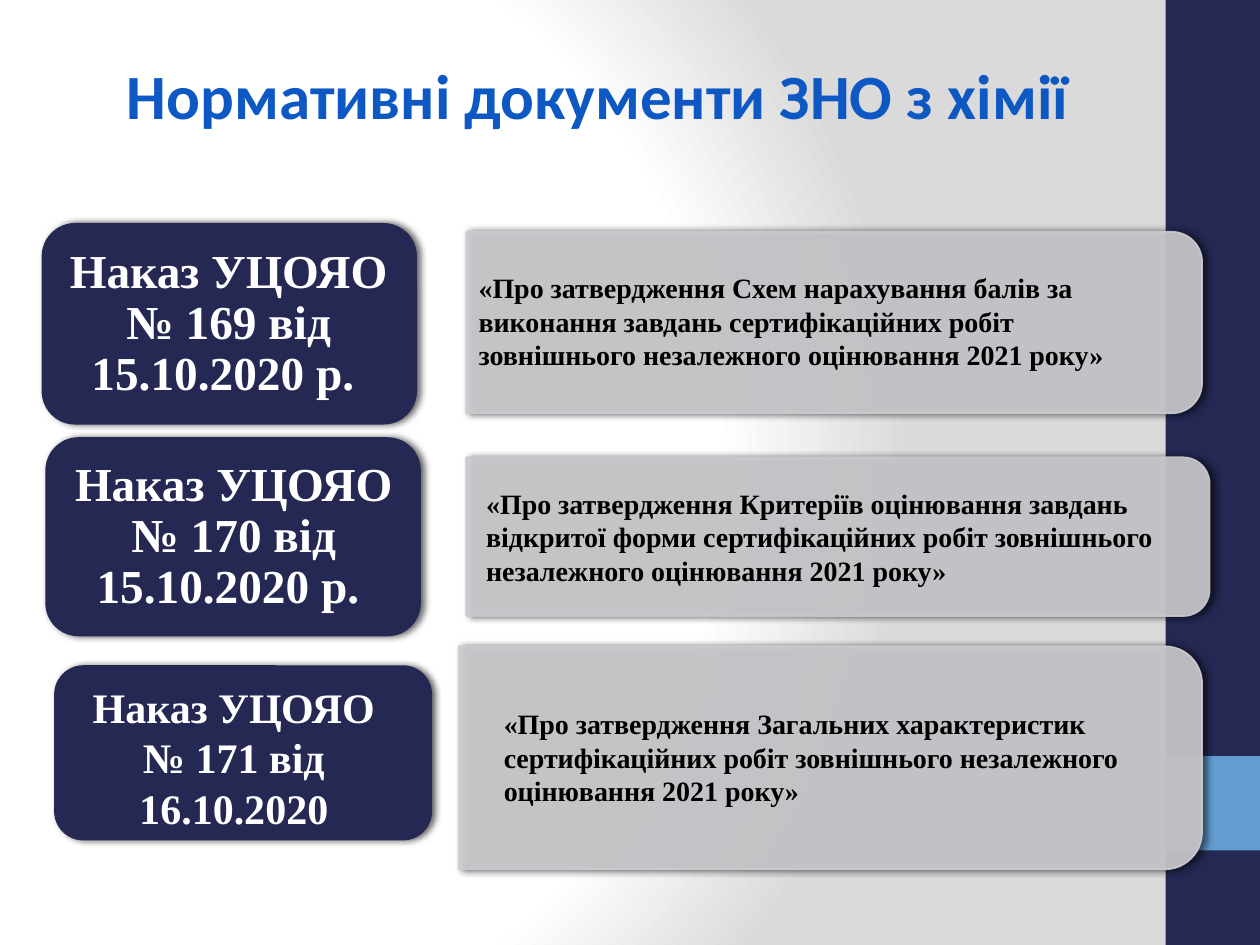
from lxml import etree
from pptx import Presentation
from pptx.dml.color import RGBColor
from pptx.enum.shapes import MSO_SHAPE as Shape
from pptx.enum.text import MSO_ANCHOR as Anchor, PP_ALIGN as Align
from pptx.oxml import parse_xml
from pptx.oxml.ns import qn
from pptx.util import Inches, Pt

NS = 'xmlns:a="http://schemas.openxmlformats.org/drawingml/2006/main"'
COLORS = {"navy": "242852", "blue": "629DD1", "title": "0E58C4", "bar": "CDCDD1",
          "edge": "C8C8CC", "white": "FFFFFF", "gray": "DADADA", "black": "000000"}
SERIF = "Times New Roman"
WIDTH, HEIGHT = 10, 7.5
SIDE = WIDTH * 0.925  # left edge of the side band

# Content: boxes are (left, top, width, height) in inches
TITLE = "Нормативні документи ЗНО з хімії"
ORDERS = [
    {"label": ["Наказ УЦОЯО № 169 від 15.10.2020 р. "],
     "detail": ["«Про затвердження Схем нарахування балів за виконання завдань сертифікаційних робіт",
                "зовнішнього незалежного оцінювання 2021 року»"],
     "card": (0.33, 1.77, 2.98, 1.6), "label_box": (0.4, 1.85, 2.83, 1.44),
     "bar": (3.7, 1.84, 5.84, 1.44), "edge": "bar", "detail_box": (3.7, 2.1, 5.69, 0.91)},
    {"label": ["Наказ УЦОЯО № 170 від 15.10.2020 р. "],
     "detail": ["«Про затвердження Критеріїв оцінювання завдань відкритої форми "
                "сертифікаційних робіт зовнішнього",
                "незалежного оцінювання 2021 року»"],
     "card": (0.36, 3.47, 2.98, 1.58), "label_box": (0.44, 3.55, 2.83, 1.43),
     "bar": (3.7, 3.63, 5.9, 1.26), "edge": "edge", "detail_box": (3.76, 3.81, 5.78, 0.91)},
    {"label": ["Наказ УЦОЯО ", "№ 171 від 16.10.2020"],
     "detail": ["«Про затвердження Загальних характеристик сертифікаційних робіт "
                "зовнішнього незалежного",
                "оцінювання 2021 року»"],
     "card": (0.43, 5.28, 3, 1.39), "label_box": (0.6, 5.36, 2.51, 1.31),
     "bar": (3.64, 5.13, 5.9, 1.77), "edge": "bar", "detail_box": (3.9, 5.56, 5.28, 0.91)},
]


def rgb(name):
    return RGBColor.from_string(COLORS[name])


def inches(box):
    return [Inches(v) for v in box]


def add_block(s, kind, box, fill):
    sp = s.shapes.add_shape(kind, *inches(box))
    sp.shadow.inherit = False
    sp.fill.solid()
    sp.fill.fore_color.rgb = rgb(fill)
    sp.line.fill.background()
    return sp


def add_shadow(sp):
    effects = sp._element.spPr.find(qn("a:effectLst"))
    effects.append(parse_xml(
        f'<a:outerShdw {NS} blurRad="{Pt(4)}" dist="{Pt(2)}" dir="0" rotWithShape="0">'
        f'<a:srgbClr val="{COLORS["black"]}"><a:alpha val="60000"/></a:srgbClr></a:outerShdw>'))


def add_bar(s, box, edge):
    # Turned a quarter so that the rounded corners face right
    x, y, w, h = box
    turned = (x + (w - h) / 2, y + (h - w) / 2, h, w)
    sp = add_block(s, Shape.ROUND_2_SAME_RECTANGLE, turned, "bar")
    sp.rotation = 90
    sp.line.color.rgb = rgb(edge)
    sp.line.width = Pt(1)
    for color in sp._element.spPr.iter(qn("a:srgbClr")):
        etree.SubElement(color, qn("a:alpha")).set("val", "90000")
    add_shadow(sp)


def write(tf, lines, size, color, font=SERIF, align=Align.LEFT):
    tf.word_wrap = True
    for i, line in enumerate(lines):
        p = tf.paragraphs[0] if i == 0 else tf.add_paragraph()
        p.alignment = align
        r = p.add_run()
        r.text = line
        r.font.name, r.font.size, r.font.bold = font, Pt(size), True
        r.font.color.rgb = rgb(color)


def add_text(s, box, *args, **kwargs):
    tf = s.shapes.add_textbox(*inches(box)).text_frame
    write(tf, *args, **kwargs)
    return tf


def set_background(s):
    s.background.fill.solid()
    solid = next(s._element.iter(qn("a:solidFill")))
    stops = "".join(f'<a:gs pos="{pos * 1000}"><a:srgbClr val="{COLORS[c]}"/></a:gs>'
                    for pos, c in [(0, "white"), (75, "white"), (100, "gray")])
    solid.getparent().replace(solid, parse_xml(
        f'<a:gradFill {NS} rotWithShape="1"><a:gsLst>{stops}</a:gsLst><a:path path="circle">'
        '<a:fillToRect l="20000" t="50000" r="100000" b="50000"/></a:path></a:gradFill>'))


def main():
    prs = Presentation()
    prs.slide_width, prs.slide_height = Inches(WIDTH), Inches(HEIGHT)
    s = prs.slides.add_slide(prs.slide_layouts[5])
    set_background(s)

    # Side band
    band = WIDTH - SIDE
    add_block(s, Shape.RECTANGLE, (SIDE, 0, band, HEIGHT), "navy")
    add_block(s, Shape.RECTANGLE, (SIDE, HEIGHT * 0.8, band, band), "blue")

    # Title
    title = s.shapes.title
    title.left, title.top, title.width, title.height = inches((0.61, 0.4, 8.27, 0.63))
    title.text_frame.vertical_anchor = Anchor.TOP
    write(title.text_frame, [TITLE], 36, "title", "Calibri", Align.CENTER)

    # Orders: a card with the number, a bar with the subject
    for order in ORDERS:
        add_bar(s, order["bar"], order["edge"])
        add_shadow(add_block(s, Shape.ROUNDED_RECTANGLE, order["card"], "navy"))
        single = len(order["label"]) == 1
        tf = add_text(s, order["label_box"], order["label"], 27 if single else 24,
                      "white", align=Align.CENTER)
        if single:
            tf.vertical_anchor = Anchor.MIDDLE
            tf.margin_left = tf.margin_right = Inches(0.11)
            tf.margin_top = tf.margin_bottom = Inches(0.06)
            tf.paragraphs[0].line_spacing = 0.9
        add_text(s, order["detail_box"], order["detail"], 16, "black")

    prs.save("out.pptx")


if __name__ == "__main__":
    main()
